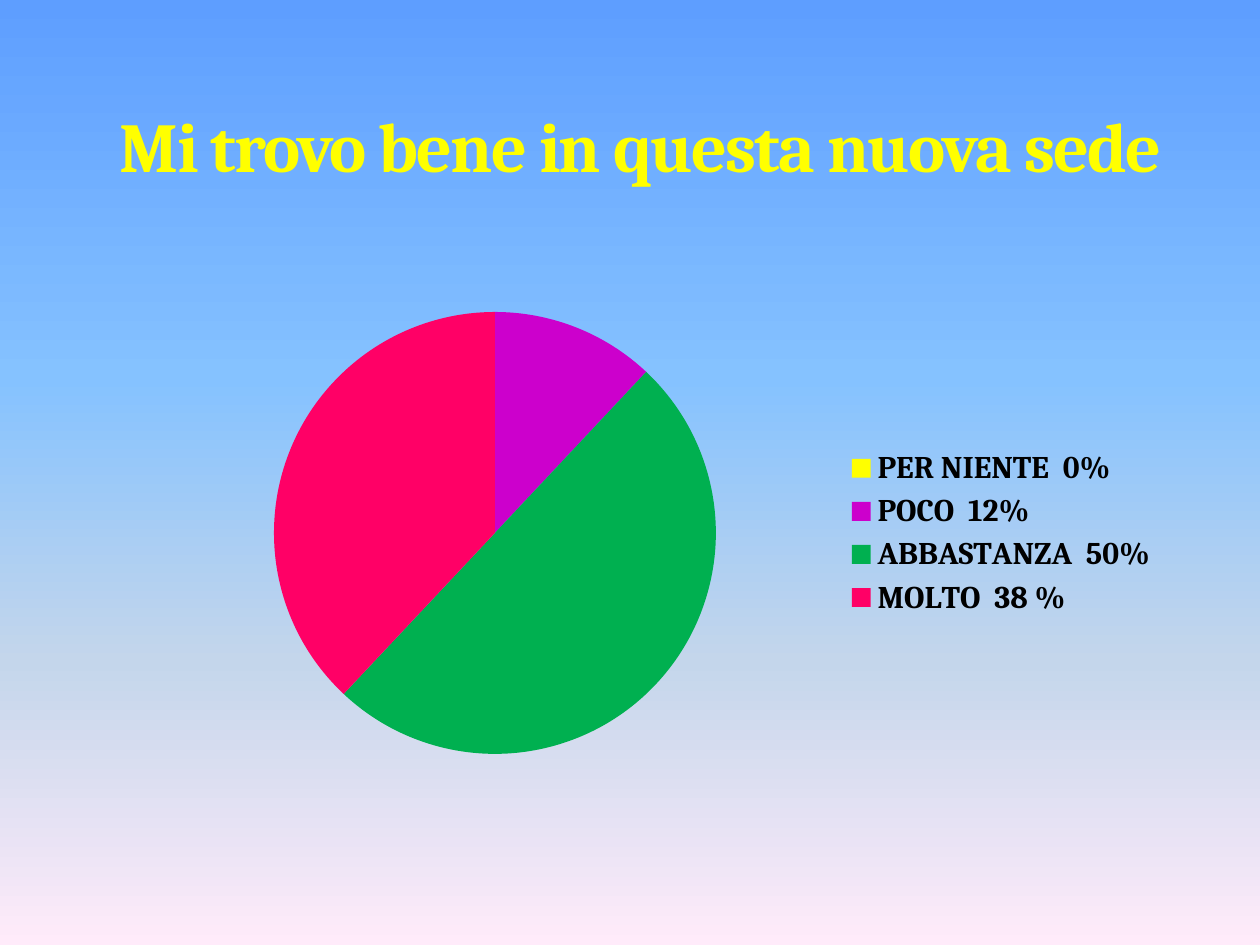
from dataclasses import dataclass

from lxml import etree
from pptx import Presentation
from pptx.chart.data import CategoryChartData
from pptx.dml.color import RGBColor
from pptx.enum.chart import XL_CHART_TYPE, XL_LEGEND_POSITION
from pptx.enum.text import MSO_ANCHOR, PP_ALIGN
from pptx.oxml import parse_xml
from pptx.oxml.ns import nsdecls, qn
from pptx.util import Pt

PIE = XL_CHART_TYPE.PIE
RIGHT = XL_LEGEND_POSITION.RIGHT
BOTTOM = MSO_ANCHOR.BOTTOM
CENTER = PP_ALIGN.CENTER
PX = 914400 // 126


@dataclass(frozen=True)
class Theme:
    font: str = "Cambria"
    title_size: int = 40
    legend_size: int = 18
    title: str = "FFFF00"
    legend: str = "000000"
    backdrop: tuple = ((0, "5E9EFF"), (40, "85C2FF"), (70, "C4D6EB"), (100, "FFEBFA"))


theme = Theme()
answers = [
    ("PER NIENTE  0%", 0, "FFFF00"),
    ("POCO  12%", 12, "CC00CC"),
    ("ABBASTANZA  50%", 50, "00B050"),
    ("MOLTO  38 %", 38, "FF0066"),
]


def style_font(font, size, color):
    font.name = theme.font
    font.size = Pt(size)
    font.bold = True
    font.color.rgb = RGBColor.from_string(color)


prs = Presentation()
prs.slide_width, prs.slide_height = 1260 * PX, 945 * PX
s = prs.slides.add_slide(prs.slide_layouts[5])

# Background: four-stop gradient from top to bottom
fill = s.background.fill
fill.gradient()
fill.gradient_angle = 270
stops = s.background._cSld.find(".//" + qn("a:gsLst"))
for stop in list(stops):
    stops.remove(stop)
for position, color in theme.backdrop:
    gs = etree.SubElement(stops, qn("a:gs"), pos=str(position * 1000))
    etree.SubElement(gs, qn("a:srgbClr"), val=color)

# Title with a soft shadow below the letters
title = s.shapes.title
title.left, title.top, title.width, title.height = 42 * PX, 88 * PX, 1197 * PX, 168 * PX
tf = title.text_frame
tf.word_wrap = True
tf.vertical_anchor = BOTTOM
tf.margin_bottom = 69 * PX
p = tf.paragraphs[0]
p.alignment = CENTER
r = p.add_run()
r.text = "Mi trovo bene in questa nuova sede"
style_font(r.font, theme.title_size, theme.title)
rPr = r._r.get_or_add_rPr()
rPr.set("spc", "-100")
rPr.find(qn("a:solidFill")).addnext(parse_xml(
    f'<a:effectLst {nsdecls("a")}><a:outerShdw blurRad="50800" dist="38100" dir="5400000">'
    '<a:srgbClr val="000000"><a:alpha val="60000"/></a:srgbClr></a:outerShdw></a:effectLst>'))

# Pie chart of the answers
data = CategoryChartData()
data.categories = [label for label, _, _ in answers]
data.add_series("Series 1", [value for _, value, _ in answers])
chart = s.shapes.add_chart(PIE, 147 * PX, 295 * PX, 1024 * PX, 476 * PX, data).chart
chart.has_title = False
plot = chart.plots[0]
plot.vary_by_categories = True
for i, (_, _, color) in enumerate(answers):
    point = plot.series[0].points[i]
    point.format.fill.solid()
    point.format.fill.fore_color.rgb = RGBColor.from_string(color)

# Position of the pie inside the chart frame
plot_area = chart._chartSpace.chart.plotArea
for old in plot_area.findall(qn("c:layout")):
    plot_area.remove(old)
layout = etree.Element(qn("c:layout"))
manual = etree.SubElement(layout, qn("c:manualLayout"))
for tag, value in (("layoutTarget", "inner"), ("xMode", "edge"), ("yMode", "edge"),
                   ("x", 127 / 1024), ("y", 17 / 476), ("w", 442 / 1024), ("h", 442 / 476)):
    etree.SubElement(manual, qn("c:" + tag), val=str(value))
plot_area.insert(0, layout)

# Legend
chart.has_legend = True
chart.legend.position = RIGHT
chart.legend.include_in_layout = True
style_font(chart.legend.font, theme.legend_size, theme.legend)

prs.save("out.pptx")
